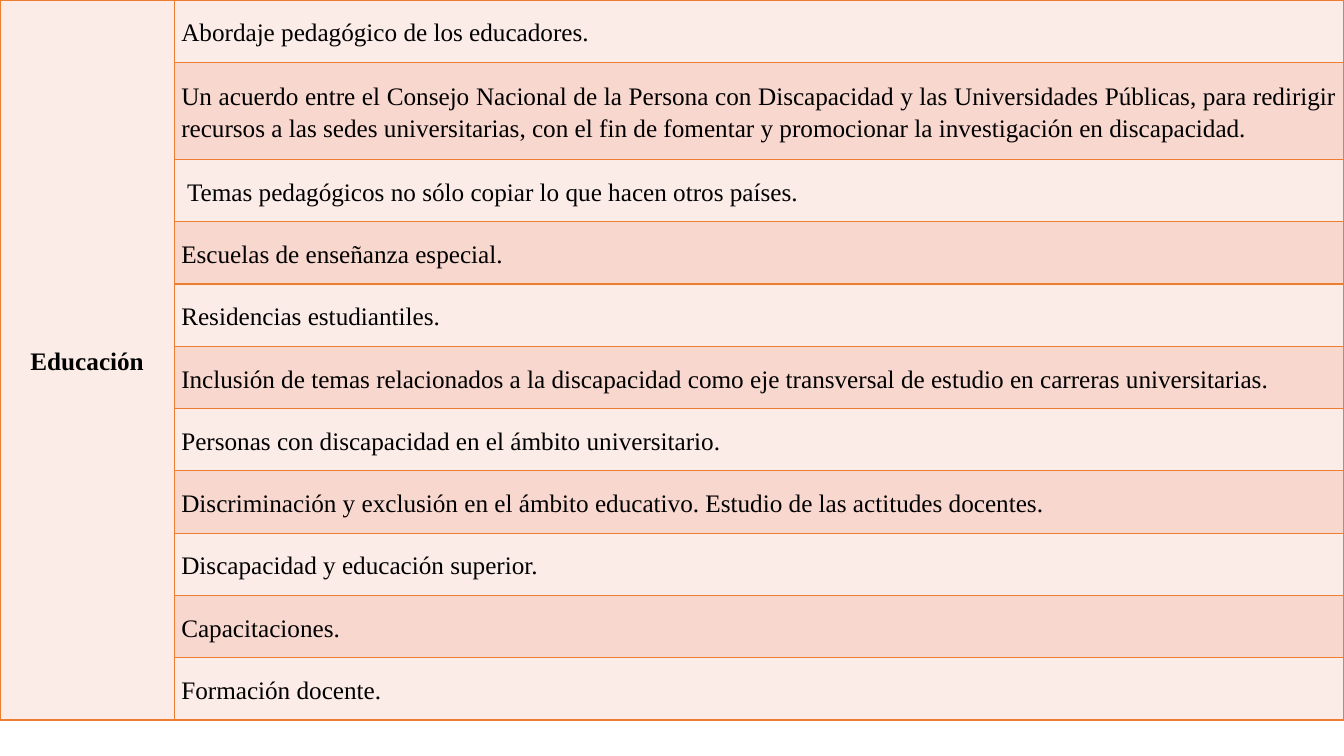
from dataclasses import dataclass

import pptx
import pptx.dml.color
import pptx.enum.text
import pptx.oxml
import pptx.oxml.ns
import pptx.table
import pptx.util

PX = 6350  # EMU in one px, 144 px to the inch
SLIDE_WIDTH, SLIDE_HEIGHT = 1920, 1080
COLUMN_WIDTHS = (249, 1671)
ROW_HEIGHT, TALL_ROW_HEIGHT = 89, 139
CELL_INSET = 10
BORDER_WIDTH = 2
COLORS = {"light": "FCECE8", "dark": "F8D7CE", "border": "ED7D31", "text": "000000"}
ALIGN = pptx.enum.text.PP_ALIGN


@dataclass(frozen=True)
class Topic:
    text: str
    height: int = ROW_HEIGHT


CATEGORY = "Educación"
TOPICS = (
    Topic("Abordaje pedagógico de los educadores."),
    Topic(
        "Un acuerdo entre el Consejo Nacional de la Persona con Discapacidad y las "
        "Universidades Públicas, para redirigir recursos a las sedes universitarias, "
        "con el fin de fomentar y promocionar la investigación en discapacidad.",
        TALL_ROW_HEIGHT,
    ),
    Topic(" Temas pedagógicos no sólo copiar lo que hacen otros países."),
    Topic("Escuelas de enseñanza especial."),
    Topic("Residencias estudiantiles."),
    Topic(
        "Inclusión de temas relacionados a la discapacidad como eje transversal "
        "de estudio en carreras universitarias."
    ),
    Topic("Personas con discapacidad en el ámbito universitario."),
    Topic(
        "Discriminación y exclusión en el ámbito educativo. "
        "Estudio de las actitudes docentes."
    ),
    Topic("Discapacidad y educación superior."),
    Topic("Capacitaciones."),
    Topic("Formación docente."),
)

CELL_FORMAT = {
    "margin_left": CELL_INSET * PX,
    "margin_right": CELL_INSET * PX,
    "margin_top": 0,
    "margin_bottom": 0,
    "vertical_anchor": pptx.enum.text.MSO_ANCHOR.MIDDLE,
}
PARAGRAPH_FORMAT = {"line_spacing": 1.15, "space_after": pptx.util.Pt(10)}
FONT_FORMAT = {"name": "Times New Roman", "size": pptx.util.Pt(18)}


def rgb(name: str) -> pptx.dml.color.RGBColor:
    return pptx.dml.color.RGBColor.from_string(COLORS[name])


def apply_format(target: object, values: dict) -> None:
    for name, value in values.items():
        setattr(target, name, value)


def style_cell(cell: pptx.table._Cell, fill: str) -> None:
    """Fill a cell and draw its four borders."""
    apply_format(cell, CELL_FORMAT)
    cell.fill.solid()
    cell.fill.fore_color.rgb = rgb(fill)
    properties = cell._tc.get_or_add_tcPr()
    # Borders come before the fill in the cell properties
    for index, side in enumerate("LRTB"):
        border = pptx.oxml.parse_xml(
            f'<a:ln{side} {pptx.oxml.ns.nsdecls("a")} w="{BORDER_WIDTH * PX}">'
            f'<a:solidFill><a:srgbClr val="{COLORS["border"]}"/></a:solidFill>'
            f"</a:ln{side}>"
        )
        properties.insert(index, border)


def write_cell(cell: pptx.table._Cell, text: str, alignment: ALIGN, bold: bool) -> None:
    paragraph = cell.text_frame.paragraphs[0]
    apply_format(paragraph, {**PARAGRAPH_FORMAT, "alignment": alignment})
    run = paragraph.add_run()
    run.text = text
    apply_format(run.font, {**FONT_FORMAT, "bold": bold})
    run.font.color.rgb = rgb("text")


def main() -> None:
    presentation = pptx.Presentation()
    presentation.slide_width = SLIDE_WIDTH * PX
    presentation.slide_height = SLIDE_HEIGHT * PX
    slide = presentation.slides.add_slide(presentation.slide_layouts[6])

    # Table grid
    table_height = sum(topic.height for topic in TOPICS)
    table = slide.shapes.add_table(
        len(TOPICS), len(COLUMN_WIDTHS), 0, 0, sum(COLUMN_WIDTHS) * PX, table_height * PX
    ).table
    for column, width in zip(table.columns, COLUMN_WIDTHS):
        column.width = width * PX

    # Topics in alternating bands
    for index, topic in enumerate(TOPICS):
        table.rows[index].height = topic.height * PX
        style_cell(table.cell(index, 0), "light")
        topic_cell = table.cell(index, 1)
        style_cell(topic_cell, "dark" if index % 2 else "light")
        write_cell(topic_cell, topic.text, ALIGN.JUSTIFY, False)

    # Category across all rows
    category_cell = table.cell(0, 0)
    category_cell.merge(table.cell(len(TOPICS) - 1, 0))
    write_cell(category_cell, CATEGORY, ALIGN.CENTER, True)

    presentation.save("out.pptx")


if __name__ == "__main__":
    main()
